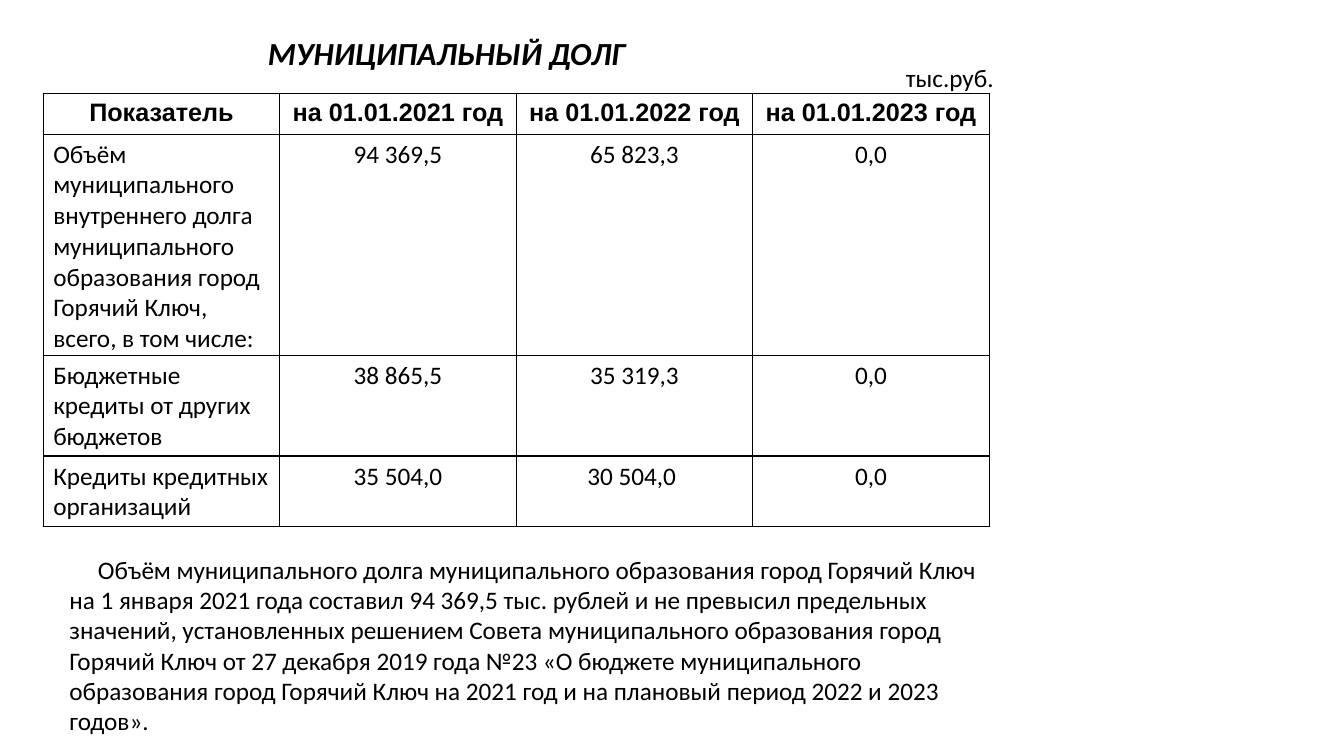
"""Build the municipal debt slide with its table and explanatory text."""
from dataclasses import dataclass

from lxml.etree import SubElement
from pptx import Presentation
from pptx.dml.color import RGBColor
from pptx.enum.text import MSO_AUTO_SIZE as AutoSize, PP_ALIGN as Align
from pptx.oxml.ns import qn
from pptx.slide import Slide
from pptx.table import _Cell as Cell
from pptx.text.text import TextFrame
from pptx.util import Cm, Pt

BLACK = RGBColor(0, 0, 0)
BORDER_WIDTH = Pt(1)
COLUMN_WIDTH = 5.96
ROW_HEIGHTS = (1.02, 5.57, 2.54, 1.78)
DEBT_ROWS = (
    ("Показатель", "на 01.01.2021 год", "на 01.01.2022 год", "на 01.01.2023 год"),
    ("Объём муниципального внутреннего долга муниципального образования "
     "город Горячий Ключ, всего, в том числе:", "94 369,5", "65 823,3", "0,0"),
    ("Бюджетные кредиты от других бюджетов", "38 865,5", "35 319,3", "0,0"),
    ("Кредиты кредитных организаций", "35 504,0", "30 504,0 ", "0,0"),
)


@dataclass(frozen=True)
class TextStyle:
    size: float = 18
    font: str = "Calibri"
    bold: bool = False
    italic: bool = False
    align: Align = Align.LEFT
    indent: float = 0


@dataclass(frozen=True)
class TextBlock:
    text: str
    left: float
    top: float
    width: float
    height: float
    style: TextStyle = TextStyle()
    wrap: bool = True


HEADER = TextStyle(font="Arial", bold=True, align=Align.CENTER)
LABEL = TextStyle()
VALUE = TextStyle(align=Align.CENTER)

TEXT_BLOCKS = (
    TextBlock("МУНИЦИПАЛЬНЫЙ ДОЛГ", 6.5, 0.71, 12.12, 1.24,
              TextStyle(size=23, bold=True, italic=True)),
    TextBlock("Объём муниципального долга муниципального образования город "
              "Горячий Ключ на 1 января 2021 года составил 94 369,5 тыс. рублей "
              "и не превысил предельных значений, установленных решением Совета "
              "муниципального образования город Горячий Ключ от 27 декабря "
              "2019 года №23 «О бюджете муниципального образования город "
              "Горячий Ключ на 2021 год и на плановый период 2022 и 2023 годов».",
              1.5, 13.84, 23.85, 5.64, TextStyle(indent=0.72)),
    TextBlock("тыс.руб.", 22.58, 1.45, 2.77, 1.02, wrap=False),
)


def write_text(frame: TextFrame, text: str, style: TextStyle) -> None:
    """Fill the first paragraph of a frame with one styled run."""
    paragraph = frame.paragraphs[0]
    paragraph.alignment = style.align
    if style.indent:
        paragraph._p.get_or_add_pPr().set("indent", str(Cm(style.indent)))
    run = paragraph.add_run()
    run.text = text
    font = run.font
    font.name, font.size = style.font, Pt(style.size)
    font.bold, font.italic = style.bold, style.italic
    font.color.rgb = BLACK


def add_text_block(slide: Slide, block: TextBlock) -> None:
    """Place a text box on the slide."""
    shape = slide.shapes.add_textbox(
        Cm(block.left), Cm(block.top), Cm(block.width), Cm(block.height))
    frame = shape.text_frame
    frame.word_wrap = block.wrap
    frame.auto_size = AutoSize.SHAPE_TO_FIT_TEXT
    write_text(frame, block.text, block.style)


def outline_cell(cell: Cell) -> None:
    """Draw a solid border on all four sides of a cell."""
    properties = cell._tc.get_or_add_tcPr()
    for side in ("a:lnL", "a:lnR", "a:lnT", "a:lnB"):
        line = SubElement(properties, qn(side), w=str(BORDER_WIDTH))
        fill = SubElement(line, qn("a:solidFill"))
        SubElement(fill, qn("a:srgbClr"), val=str(BLACK))


def add_debt_table(slide: Slide) -> None:
    """Add the table of debt by year."""
    column_count = len(DEBT_ROWS[0])
    table = slide.shapes.add_table(
        len(DEBT_ROWS), column_count, Cm(1.09), Cm(2.36),
        Cm(COLUMN_WIDTH * column_count), Cm(sum(ROW_HEIGHTS))).table
    table.first_row = table.horz_banding = False
    for column in table.columns:
        column.width = Cm(COLUMN_WIDTH)
    for row_index, (texts, height) in enumerate(zip(DEBT_ROWS, ROW_HEIGHTS)):
        table.rows[row_index].height = Cm(height)
        for column_index, text in enumerate(texts):
            cell = table.cell(row_index, column_index)
            cell.margin_bottom = Cm(0)
            outline_cell(cell)
            cell.fill.background()
            body_style = VALUE if column_index else LABEL
            write_text(cell.text_frame, text, body_style if row_index else HEADER)


def main() -> None:
    """Create and save the presentation."""
    presentation = Presentation()
    presentation.slide_width, presentation.slide_height = Cm(33.87), Cm(19.05)
    slide = presentation.slides.add_slide(presentation.slide_layouts[6])
    add_debt_table(slide)
    for block in TEXT_BLOCKS:
        add_text_block(slide, block)
    presentation.save("out.pptx")


if __name__ == "__main__":
    main()
